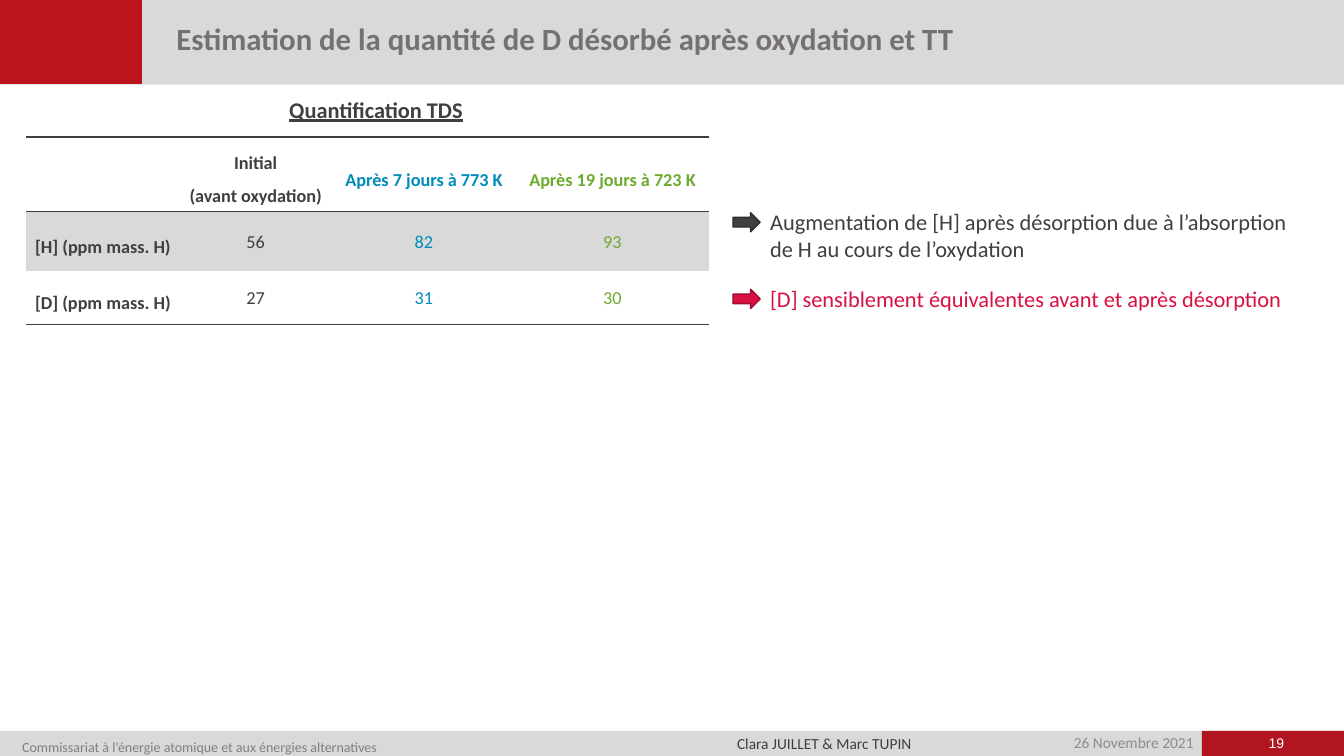
from lxml.etree import SubElement
from pptx import Presentation
from pptx.dml.color import RGBColor
from pptx.enum.shapes import MSO_SHAPE as SHAPE
from pptx.enum.text import MSO_ANCHOR as ANCHOR, PP_ALIGN as ALIGN
from pptx.oxml.ns import qn
from pptx.util import Inches, Pt

DARK = RGBColor(0x3F, 0x3F, 0x3F)
DARK_EDGE = RGBColor(0x2F, 0x2F, 0x2F)
TITLE_GREY = RGBColor(0x76, 0x71, 0x71)
DATE_GREY = RGBColor(0x8C, 0x8C, 0x8C)
FOOTER_GREY = RGBColor(0x80, 0x80, 0x80)
BAND = RGBColor(0xD9, 0xD9, 0xD9)
HEADER_RED = RGBColor(0xBC, 0x14, 0x1C)
FOOTER_RED = RGBColor(0xB1, 0x15, 0x1F)
CRIMSON = RGBColor(0xD8, 0x11, 0x42)
CRIMSON_EDGE = RGBColor(0xA0, 0x0D, 0x31)
BLUE = RGBColor(0x00, 0x8B, 0xBC)
GREEN = RGBColor(0x6E, 0xAA, 0x2E)
WHITE = RGBColor(0xFF, 0xFF, 0xFF)

FOOTER_INSETS = (0.08, 0)
COLUMN_COLORS = (DARK, DARK, BLUE, GREEN)
COLUMN_WIDTHS = (1.52, 1.51, 1.83, 1.91)
ROW_HEIGHTS = (0.74, 0.59, 0.53)
MEASURES = (
    ("", "Initial\n(avant oxydation)", "Après 7 jours à 773 K", "Après 19 jours à 723 K"),
    ("[H] (ppm mass. H)", "56", "82", "93"),
    ("[D] (ppm mass. H)", "27", "31", "30"),
)
FINDINGS = (
    (2.02, 5.57, 0.64, DARK, DARK_EDGE,
     "Augmentation de [H] après désorption due à l’absorption de H au cours de l’oxydation"),
    (2.78, 5.39, 0.37, CRIMSON, CRIMSON_EDGE,
     "[D] sensiblement équivalentes avant et après désorption"),
)


class SlideBuilder:
    def __init__(self, slide, font="Calibri"):
        self.slide = slide
        self.font = font

    def shape(self, kind, at, fill, edge=None):
        shape = self.slide.shapes.add_shape(kind, *map(Inches, at))
        shape.shadow.inherit = False
        shape.fill.solid()
        shape.fill.fore_color.rgb = fill
        if edge is None:
            shape.line.fill.background()
        else:
            shape.line.color.rgb = edge
            shape.line.width = Pt(1)

    def style(self, paragraph, size, color, bold=False, align=None, spacing=None, font=None):
        paragraph.alignment = align
        paragraph.line_spacing = spacing
        paragraph.font.name = font or self.font
        paragraph.font.size = Pt(size)
        paragraph.font.bold = bold
        paragraph.font.color.rgb = color

    def text(self, at, words, size, color, insets=(0.1, 0.05), wrap=True,
             anchor=ANCHOR.TOP, underline=False, **style):
        frame = self.slide.shapes.add_textbox(*map(Inches, at)).text_frame
        frame.word_wrap = wrap
        frame.vertical_anchor = anchor
        frame.margin_left = frame.margin_right = Inches(insets[0])
        frame.margin_top = frame.margin_bottom = Inches(insets[1])
        paragraph = frame.paragraphs[0]
        paragraph.text = words
        self.style(paragraph, size, color, **style)
        paragraph.font.underline = underline

    def cell_borders(self, cell, ruled):
        """Rule the named sides ("T", "B") and clear the others."""
        properties = cell._tc.get_or_add_tcPr()
        for position, side in enumerate("LRTB"):
            line = SubElement(properties, qn(f"a:ln{side}"), w=str(Pt(1)))
            if side in ruled:
                fill = SubElement(line, qn("a:solidFill"))
                SubElement(fill, qn("a:srgbClr"), val=str(DARK))
            else:
                SubElement(line, qn("a:noFill"))
            properties.insert(position, line)

    def table(self, left, top, rows):
        size = (sum(COLUMN_WIDTHS), sum(ROW_HEIGHTS))
        table = self.slide.shapes.add_table(
            len(rows), len(rows[0]), *map(Inches, (left, top, *size))).table
        table.first_row = table.horz_banding = False
        for column, width in zip(table.columns, COLUMN_WIDTHS):
            column.width = Inches(width)
        for r, (row, height) in enumerate(zip(rows, ROW_HEIGHTS)):
            table.rows[r].height = Inches(height)
            for c, words in enumerate(row):
                cell = table.cell(r, c)
                cell.text = words
                cell.vertical_anchor = ANCHOR.MIDDLE
                cell.margin_left = cell.margin_right = Inches(0.07)
                cell.margin_top = cell.margin_bottom = 0
                is_label = r == 0 or c == 0
                for paragraph in cell.text_frame.paragraphs:
                    self.style(paragraph, 13, COLUMN_COLORS[c], bold=is_label,
                               align=ALIGN.CENTER, spacing=1.5 if is_label else 1.07)
                if r == 1:
                    cell.fill.solid()
                    cell.fill.fore_color.rgb = BAND
                else:
                    cell.fill.background()
                self.cell_borders(cell, ("TB", "T", "B")[r])


def main():
    presentation = Presentation()
    presentation.slide_width = Inches(13.33)
    presentation.slide_height = Inches(7.5)
    page = SlideBuilder(presentation.slides.add_slide(presentation.slide_layouts[6]))

    page.shape(SHAPE.RECTANGLE, (0, 7.25, 13.33, 0.25), BAND)
    page.shape(SHAPE.RECTANGLE, (0, 0, 13.33, 0.84), BAND)
    page.shape(SHAPE.RECTANGLE, (11.92, 7.25, 1.41, 0.25), FOOTER_RED)
    page.shape(SHAPE.RECTANGLE, (0, 0, 1.4, 0.83), HEADER_RED, HEADER_RED)

    page.text((9.61, 7.29, 2.31, 0.17), "26 Novembre 2021", 11, DATE_GREY,
              FOOTER_INSETS, align=ALIGN.RIGHT, spacing=0.9)
    page.text((0.14, 7.26, 6.03, 0.21),
              "Commissariat à l’énergie atomique et aux énergies alternatives",
              10, FOOTER_GREY, FOOTER_INSETS, spacing=1.4)
    page.text((7.23, 7.28, 1.91, 0.19), "Clara JUILLET & Marc TUPIN", 11, DARK,
              FOOTER_INSETS, wrap=False)
    page.text((12.2, 7.29, 0.92, 0.17), "19", 10, WHITE, FOOTER_INSETS,
              align=ALIGN.CENTER, font="Arial")

    page.text((1.61, 0.21, 11.7, 0.41),
              "Estimation de la quantité de D désorbé après oxydation et TT", 22,
              TITLE_GREY, (0.14, 0.05), anchor=ANCHOR.MIDDLE, bold=True, spacing=0.8)
    page.text((2.77, 0.9, 1.95, 0.37), "Quantification TDS", 16, DARK,
              wrap=False, bold=True, underline=True)
    page.table(0.26, 1.36, MEASURES)

    for top, width, height, color, edge, finding in FINDINGS:
        page.shape(SHAPE.RIGHT_ARROW, (7.27, top + 0.09, 0.27, 0.19), color, edge)
        page.text((7.54, top, width, height), finding, 16, color, wrap=height > 0.4)

    presentation.save("out.pptx")


if __name__ == "__main__":
    main()
